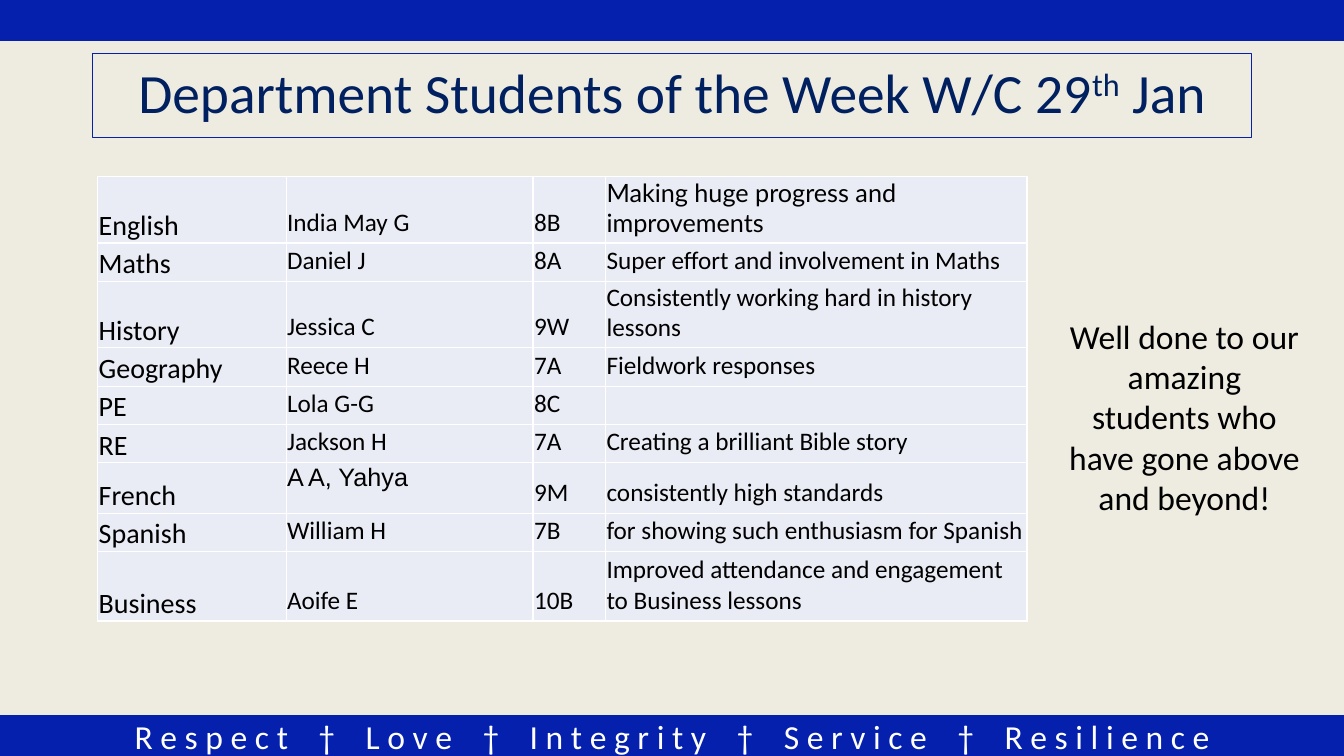
from pptx import Presentation
from pptx.dml.color import RGBColor
from pptx.enum.shapes import MSO_SHAPE
from pptx.enum.text import MSO_ANCHOR, MSO_AUTO_SIZE, PP_ALIGN
from pptx.oxml.ns import qn
from pptx.util import Pt
from lxml.etree import SubElement

BLUE = RGBColor(0x04, 0x20, 0xAC)
NAVY = RGBColor(0x00, 0x20, 0x60)
CREAM = RGBColor(0xEE, 0xEC, 0xE1)
PALE = RGBColor(0xE9, 0xEB, 0xF5)
WHITE = RGBColor(0xFF, 0xFF, 0xFF)
BLACK = RGBColor(0x00, 0x00, 0x00)

TITLE = ["Department Students of the Week W/C 29", "th", " Jan"]
PRAISE = "Well done to our amazing students who have gone above and beyond!"
VALUES = ["Respect", "Love", "Integrity", "Service", "Resilience"]
AWARDS = [
    ("English", "India May G", "8B", "Making huge progress and improvements"),
    ("Maths", "Daniel J", "8A", "Super effort and involvement in Maths"),
    ("History", "Jessica C", "9W", "Consistently working hard in history lessons"),
    ("Geography", "Reece H", "7A", "Fieldwork responses"),
    ("PE", "Lola G-G", "8C", ""),
    ("RE", "Jackson H", "7A", "Creating a brilliant Bible story"),
    ("French", "A A, Yahya", "9M", "consistently high standards"),
    ("Spanish", "William H", "7B", "for showing such enthusiasm for Spanish"),
    ("Business", "Aoife E", "10B",
     "Improved attendance and engagement to Business lessons"),
]
FONTS = {(0, 3): "Lato", (6, 1): "Arial"}
COLS = [134.6, 176.4, 51.8, 301]
ROW = 27.4
TALL = {6: 36, 8: 49.7}
WIDE, HIGH, BAND = 960, 540, 28.8
GAP = 16.3


def style(run, size, color, font="Calibri"):
    run.font.size = Pt(size)
    run.font.name = font
    run.font.color.rgb = color


def add_run(para, text, size, color):
    run = para.add_run()
    run.text = text
    style(run, size, color)
    return run


def add_box(left, top, width, height, line, fill=None):
    box = slide.shapes.add_shape(
        MSO_SHAPE.RECTANGLE, Pt(left), Pt(top), Pt(width), Pt(height))
    box.shadow.inherit = False
    if fill is None:
        box.fill.background()
    else:
        box.fill.solid()
        box.fill.fore_color.rgb = fill
    box.line.color.rgb = BLUE
    box.line.width = Pt(line)
    box.text_frame.vertical_anchor = MSO_ANCHOR.MIDDLE
    box.text_frame.paragraphs[0].alignment = PP_ALIGN.CENTER
    return box


def add_edges(cell):
    """Draw a thin white border on all four sides of a cell."""
    props = cell._tc.get_or_add_tcPr()
    for side in ("a:lnL", "a:lnR", "a:lnT", "a:lnB"):
        edge = SubElement(props, qn(side), w=str(Pt(1)))
        paint = SubElement(edge, qn("a:solidFill"))
        SubElement(paint, qn("a:srgbClr"), val=str(WHITE))


def fill_cell(cell, row, col, text):
    add_edges(cell)
    cell.fill.solid()
    cell.fill.fore_color.rgb = PALE
    cell.margin_left = cell.margin_right = cell.margin_top = Pt(0.7)
    cell.margin_bottom = Pt(3.6 if col else 0)
    top = (row, col) == (6, 1)
    cell.vertical_anchor = MSO_ANCHOR.TOP if top else MSO_ANCHOR.BOTTOM
    cell.text_frame.text = text
    for run in cell.text_frame.paragraphs[0].runs:
        style(run, 18 if col else 20, BLACK, FONTS.get((row, col), "Calibri"))


deck = Presentation()
deck.slide_width, deck.slide_height = Pt(WIDE), Pt(HIGH)
slide = deck.slides.add_slide(deck.slide_layouts[6])
slide.background.fill.solid()
slide.background.fill.fore_color.rgb = CREAM

footer = add_box(0, HIGH - BAND, WIDE, BAND, 1, BLUE)
motto = footer.text_frame.paragraphs[0]
for i, word in enumerate(VALUES):
    if i:
        for part in (" ", "†", " "):
            run = add_run(motto, part, 24, WHITE)
            if part == " ":
                run._r.get_or_add_rPr().set("spc", str(round(GAP * 100)))
    add_run(motto, " ".join(word), 24, WHITE)

add_box(0, 0, WIDE, BAND, 1, BLUE)

title = add_box(66, 38.2, 828, 59.8, 0.75).text_frame.paragraphs[0]
title.line_spacing = 0.9
for part in TITLE:
    run = add_run(title, part, 39.6, NAVY)
    if part == "th":
        run._r.get_or_add_rPr().set("baseline", "30000")

praise = slide.shapes.add_textbox(Pt(754.6), Pt(221.8), Pt(182.9), Pt(152.6))
frame = praise.text_frame
frame.word_wrap = True
frame.auto_size = MSO_AUTO_SIZE.SHAPE_TO_FIT_TEXT
frame.text = PRAISE
frame.paragraphs[0].alignment = PP_ALIGN.CENTER
style(frame.paragraphs[0].runs[0], 24, BLACK)

table = slide.shapes.add_table(
    len(AWARDS), len(COLS), Pt(69.8), Pt(126), Pt(sum(COLS)), Pt(316.8)).table
for col, width in enumerate(COLS):
    table.columns[col].width = Pt(width)
for row, award in enumerate(AWARDS):
    table.rows[row].height = Pt(TALL.get(row, ROW))
    for col, text in enumerate(award):
        fill_cell(table.cell(row, col), row, col, text)
table.first_row = table.horz_banding = False

deck.save("out.pptx")
